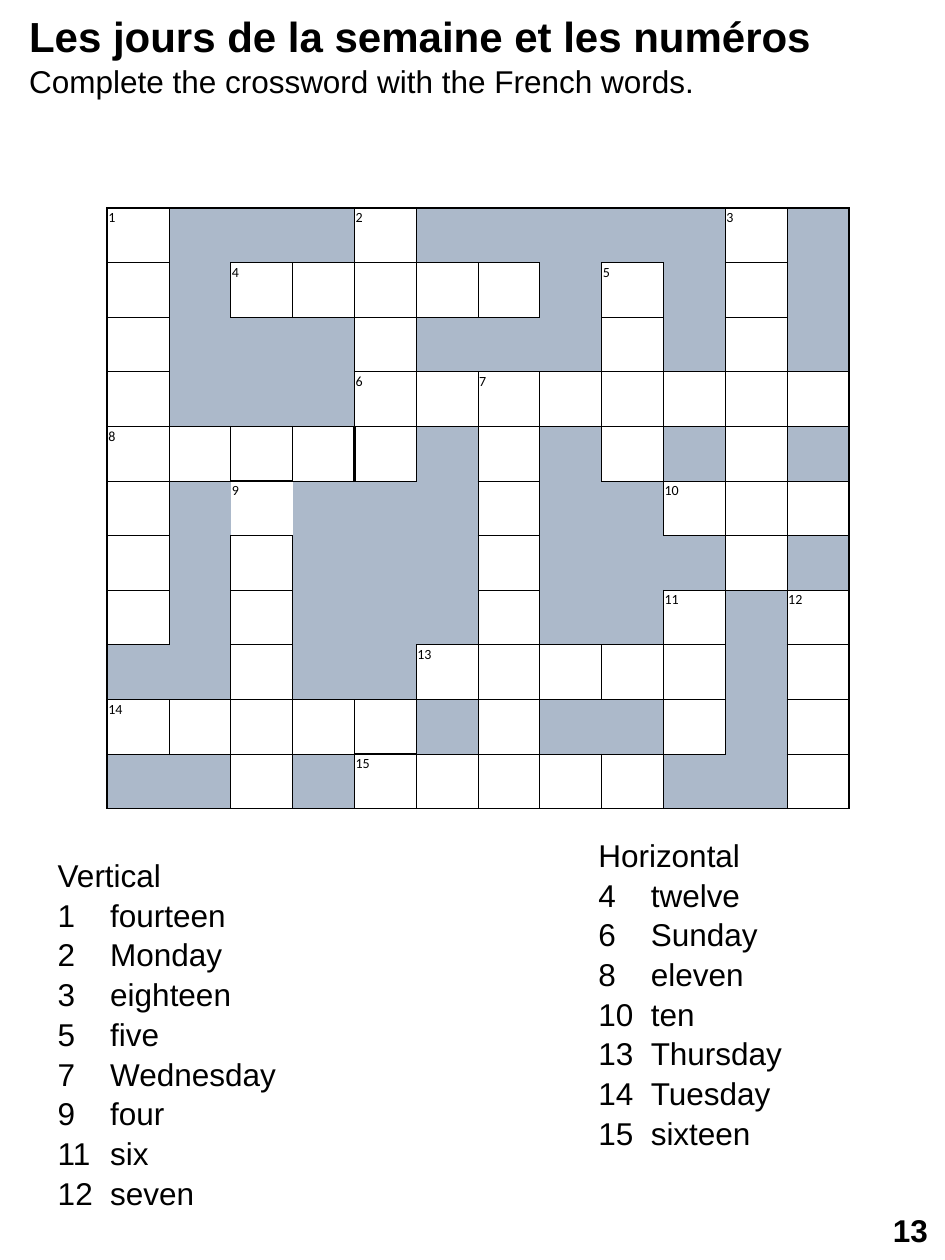
from lxml import etree
from pptx import Presentation
from pptx.dml.color import RGBColor
from pptx.enum.shapes import MSO_SHAPE
from pptx.enum.text import MSO_ANCHOR, MSO_AUTO_SIZE, PP_ALIGN
from pptx.oxml.ns import qn
from pptx.util import Pt

ROUNDED = MSO_SHAPE.ROUNDED_RECTANGLE
TOP, MIDDLE = MSO_ANCHOR.TOP, MSO_ANCHOR.MIDDLE
NO_AUTOSIZE = MSO_AUTO_SIZE.NONE
LEFT, CENTER = PP_ALIGN.LEFT, PP_ALIGN.CENTER

TITLE = "Les jours de la semaine et les numéros"
INSTRUCTION = "Complete the crossword with the French words."
PAGE_NUMBER = "13"

# One string per row: "." is a letter square, "#" a shaded one.
GRID = [
    ".###.#####.#",
    ".#.....#.#.#",
    ".###.###.#.#",
    ".###........",
    ".....#.#.#.#",
    ".#.###.##...",
    ".#.###.###.#",
    ".#.###.##.#.",
    "##.##.....#.",
    ".....#.##.#.",
    "##.#.....##.",
]
# (row, column) of each numbered square; table column 0 is an empty margin.
NUMBERS = {
    (0, 1): "1", (0, 5): "2", (0, 11): "3", (1, 3): "4", (1, 9): "5",
    (3, 5): "6", (3, 7): "7", (4, 1): "8", (5, 3): "9", (5, 10): "10",
    (7, 10): "11", (7, 12): "12", (8, 6): "13", (9, 1): "14", (10, 5): "15",
}
# Edges between two squares that differ from the usual line.
SPECIAL_EDGES = {
    frozenset([(4, 4), (4, 5)]): 1.5,
    frozenset([(9, 5), (10, 5)]): 1.5,
    frozenset([(4, 3), (5, 3)]): 1,
    frozenset([(5, 2), (5, 3)]): None,
    frozenset([(5, 3), (5, 4)]): None,
}

CLUE_LISTS = [
    {"heading": "Vertical", "box": (25.9, 484.6, 270, 203.8),
     "clues": [(1, "fourteen"), (2, "Monday"), (3, "eighteen"), (5, "five"),
               (7, "Wednesday"), (9, "four"), (11, "six"), (12, "seven")]},
    {"heading": "Horizontal", "box": (334.8, 473, 270, 181.4),
     "clues": [(4, "twelve"), (6, "Sunday"), (8, "eleven"), (10, "ten"),
               (13, "Thursday"), (14, "Tuesday"), (15, "sixteen")]},
]

THEME = {
    "font": "Arial", "grid_font": "Calibri",
    "text": RGBColor(0, 0, 0), "shade": RGBColor(0xAC, 0xB9, 0xCA),
    "line": "000000",
    "title": 24, "body": 18, "number": 8,
    "spacing": 1.05, "clue_tab": 30,
}
TITLE_BOX = (9.4, 0.7, 550, 58.3)
TABLE_BOX = (25.9, 118.8, 459.4, 343.4)
PAGE_BOX = (500.4, 686.2, 39.6, 33.8)
SIDES = {"lnL": (0, -1), "lnR": (0, 1), "lnT": (-1, 0), "lnB": (1, 0)}

SQUARES = {(row, column): mark for row, line in enumerate(GRID)
           for column, mark in enumerate(line, start=1)}


def points(box):
    return [Pt(value) for value in box]


def add_run(paragraph, text, size, bold=False, font=THEME["font"]):
    run = paragraph.add_run()
    run.text = text
    run.font.name, run.font.size, run.font.bold = font, Pt(size), bold
    run.font.color.rgb = THEME["text"]


def edge_width(square, neighbour):
    """Return the line width in points between two places, or None."""
    pair = frozenset([square, neighbour])
    if pair in SPECIAL_EDGES:
        return SPECIAL_EDGES[pair]
    marks = [SQUARES.get(place) for place in pair]
    if marks.count(None) == 2 or marks.count("#") == 2:
        return None
    return 1 if None in marks else 0.5


def set_borders(cell, row, column):
    properties = cell._tc.get_or_add_tcPr()
    for index, (tag, (down, across)) in enumerate(SIDES.items()):
        width = edge_width((row, column), (row + down, column + across))
        line = etree.Element(qn("a:" + tag))
        if width is None:
            etree.SubElement(line, qn("a:noFill"))
        else:
            line.set("w", str(Pt(width)))
            fill = etree.SubElement(line, qn("a:solidFill"))
            etree.SubElement(fill, qn("a:srgbClr"), val=THEME["line"])
        properties.insert(index, line)


def add_crossword(slide):
    row_count, column_count = len(GRID), len(GRID[0]) + 1
    table = slide.shapes.add_table(row_count, column_count, *points(TABLE_BOX)).table
    table.first_row = table.horz_banding = False
    for column in table.columns:
        column.width = Pt(TABLE_BOX[2] / column_count)
    for row in table.rows:
        row.height = Pt(TABLE_BOX[3] / row_count)
    for row in range(row_count):
        for column in range(column_count):
            cell = table.cell(row, column)
            cell.margin_left = cell.margin_right = cell.margin_top = Pt(0.7)
            cell.margin_bottom = 0
            if SQUARES.get((row, column)) == "#":
                cell.fill.solid()
                cell.fill.fore_color.rgb = THEME["shade"]
            else:
                cell.fill.background()
            set_borders(cell, row, column)
            if (row, column) in NUMBERS:
                add_run(cell.text_frame.paragraphs[0], NUMBERS[row, column],
                        THEME["number"], font=THEME["grid_font"])


def add_title(slide):
    title = slide.shapes.title
    title.left, title.top, title.width, title.height = points(TITLE_BOX)
    frame = title.text_frame
    frame.word_wrap, frame.auto_size = True, NO_AUTOSIZE
    frame.vertical_anchor = TOP
    paragraph = frame.paragraphs[0]
    paragraph.alignment, paragraph.line_spacing = LEFT, THEME["spacing"]
    add_run(paragraph, TITLE, THEME["title"], bold=True)
    paragraph.add_line_break()
    add_run(paragraph, INSTRUCTION, THEME["body"])


def add_clues(slide, heading, box, clues):
    frame = slide.shapes.add_textbox(*points(box)).text_frame
    frame.word_wrap = True
    lines = [heading] + [f"{number}\t{word}" for number, word in clues]
    for index, line in enumerate(lines):
        paragraph = frame.add_paragraph() if index else frame.paragraphs[0]
        paragraph.line_spacing = THEME["spacing"]
        tabs = etree.SubElement(paragraph._p.get_or_add_pPr(), qn("a:tabLst"))
        etree.SubElement(tabs, qn("a:tab"), pos=str(Pt(THEME["clue_tab"])), algn="l")
        add_run(paragraph, line, THEME["body"])


def add_page_number(slide):
    shape = slide.shapes.add_shape(ROUNDED, *points(PAGE_BOX))
    shape.shadow.inherit = False
    shape.fill.background()
    shape.line.fill.background()
    shape.text_frame.vertical_anchor = MIDDLE
    paragraph = shape.text_frame.paragraphs[0]
    paragraph.alignment = CENTER
    add_run(paragraph, PAGE_NUMBER, THEME["body"], bold=True)


def main():
    presentation = Presentation()
    presentation.slide_width, presentation.slide_height = Pt(540), Pt(720)
    slide = presentation.slides.add_slide(presentation.slide_layouts[5])
    add_crossword(slide)
    add_title(slide)
    for clue_list in CLUE_LISTS:
        add_clues(slide, **clue_list)
    add_page_number(slide)
    presentation.save("out.pptx")


if __name__ == "__main__":
    main()
